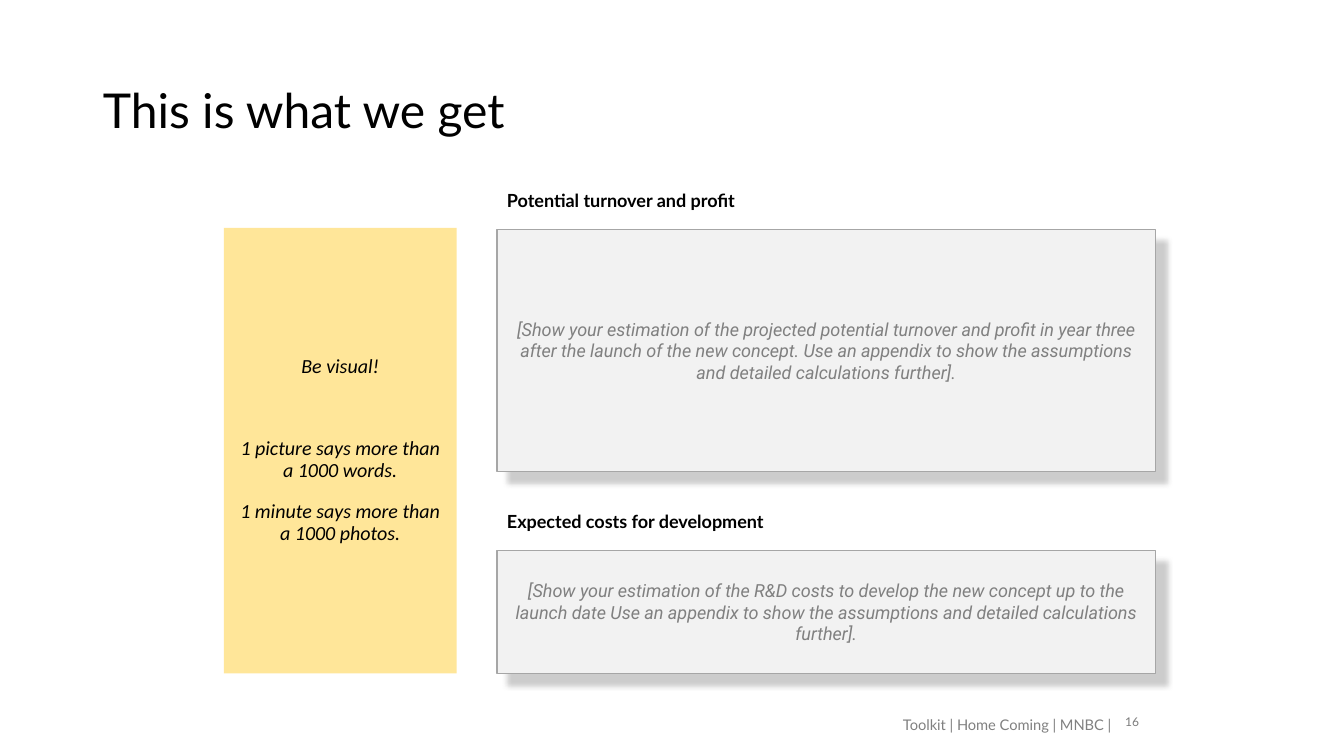
from lxml.etree import SubElement
from pptx import Presentation
from pptx.dml.color import RGBColor
from pptx.enum.shapes import MSO_SHAPE
from pptx.enum.text import MSO_ANCHOR, PP_ALIGN
from pptx.oxml.ns import qn
from pptx.util import Inches, Pt

BLACK = RGBColor(0x00, 0x00, 0x00)
GREY = RGBColor(0x80, 0x80, 0x80)
NUMBER_GREY = RGBColor(0x7C, 0x7C, 0x7C)
BORDER_GREY = RGBColor(0xA6, 0xA6, 0xA6)
PANEL_GREY = RGBColor(0xF2, 0xF2, 0xF2)
YELLOW = RGBColor(0xFF, 0xE6, 0x99)

# Columns and rows of the page, in inches
TIP_LEFT, TIP_WIDTH = 2.22, 2.31
MAIN_LEFT, MAIN_WIDTH = 4.93, 6.53
TIP_TOP, CONTENT_BOTTOM = 2.26, 6.68
HEADING_WIDTH, HEADING_HEIGHT = 4.03, 0.32
HEADING_TO_PANEL = 0.45

SECTIONS = [
    (1.83, 2.4, "Potential turnover and profit",
     "[Show your estimation of the projected potential turnover and profit in "
     "year three after the launch of the new concept. Use an appendix to show "
     "the assumptions and detailed calculations further]."),
    (5.01, 1.22, "Expected costs for development",
     "[Show your estimation of the R&D costs to develop the new concept up to "
     "the launch date Use an appendix to show the assumptions and detailed "
     "calculations further]."),
]
TIPS = ["Be visual!", "1 picture says more than a 1000 words.",
        "1 minute says more than a 1000 photos."]
TIP_GAPS = [0, 43.3, 14]


def write(shape, *lines, size, font="Lato", color=BLACK, bold=False,
          italic=False, align=PP_ALIGN.LEFT, anchor=MSO_ANCHOR.TOP,
          wrap=True, line_spacing=None, gaps=(0,)):
    """Fill a shape with one paragraph per line; gaps are points before each."""
    frame = shape.text_frame
    frame.word_wrap = wrap
    frame.vertical_anchor = anchor
    frame.text = "\n".join(lines)
    for paragraph, gap in zip(frame.paragraphs, gaps):
        paragraph.alignment = align
        paragraph.space_before = Pt(gap)
        paragraph.line_spacing = line_spacing
        for run in paragraph.runs:
            run.font.name = font
            run.font.size = Pt(size)
            run.font.color.rgb = color
            run.font.bold = bold
            run.font.italic = italic


def add_label(slide, box, text, **text_format):
    label = slide.shapes.add_textbox(*map(Inches, box))
    write(label, text, **text_format)
    return label


def add_panel(slide, box, fill, border=None):
    panel = slide.shapes.add_shape(MSO_SHAPE.RECTANGLE, *map(Inches, box))
    panel.shadow.inherit = False
    panel.fill.solid()
    panel.fill.fore_color.rgb = fill
    if border is None:
        panel.line.fill.background()
    else:
        panel.line.color.rgb = border
        panel.line.width = Pt(1)
    return panel


def cast_shadow(panel):
    """Give the panel a soft grey shadow towards its lower right."""
    effects = panel.element.spPr.find(qn("a:effectLst"))
    shadow = SubElement(effects, qn("a:outerShdw"), blurRad=str(Pt(4)),
                        dist=str(Pt(11)), dir=str(45 * 60000),
                        algn="tl", rotWithShape="0")
    color = SubElement(shadow, qn("a:srgbClr"), val=str(GREY))
    SubElement(color, qn("a:alpha"), val="40000")


def add_title(slide, text):
    title = slide.shapes.title
    title.left, title.top, title.width, title.height = map(
        Inches, (0.92, 0.4, 11.5, 1.45))
    write(title, text, size=34.3, anchor=MSO_ANCHOR.MIDDLE, line_spacing=0.9)


def add_section(slide, top, panel_height, heading, hint):
    panel = add_panel(
        slide, (MAIN_LEFT, top + HEADING_TO_PANEL, MAIN_WIDTH, panel_height),
        PANEL_GREY, BORDER_GREY)
    cast_shadow(panel)
    write(panel, hint, size=12.9, font="Roboto", color=GREY, italic=True,
          align=PP_ALIGN.CENTER, anchor=MSO_ANCHOR.MIDDLE)
    add_label(slide, (MAIN_LEFT, top, HEADING_WIDTH, HEADING_HEIGHT), heading,
              size=12.9, bold=True)


def add_tips(slide):
    tips = add_panel(
        slide, (TIP_LEFT, TIP_TOP, TIP_WIDTH, CONTENT_BOTTOM - TIP_TOP), YELLOW)
    write(tips, *TIPS, size=14.3, font="Calibri", italic=True,
          align=PP_ALIGN.CENTER, anchor=MSO_ANCHOR.MIDDLE,
          line_spacing=0.9, gaps=TIP_GAPS)


def add_footer(slide):
    number = add_label(slide, (11.06, 7.03, 0.34, 0.25), "16", size=8.6,
                       color=NUMBER_GREY, align=PP_ALIGN.CENTER,
                       anchor=MSO_ANCHOR.MIDDLE)
    frame = number.text_frame
    frame.margin_left = frame.margin_right = Inches(0.1)
    frame.margin_top = frame.margin_bottom = Inches(0.1)
    add_label(slide, (8.77, 7.05, 2.39, 0.28), "Toolkit | Home Coming | MNBC | ",
              size=10.5, color=GREY, align=PP_ALIGN.RIGHT, wrap=False)


def main():
    deck = Presentation()
    deck.slide_width, deck.slide_height = Inches(13.33), Inches(7.5)
    slide = deck.slides.add_slide(deck.slide_layouts[5])
    add_title(slide, "This is what we get")
    add_footer(slide)
    for section in SECTIONS:
        add_section(slide, *section)
    add_tips(slide)
    deck.save("out.pptx")


if __name__ == "__main__":
    main()
